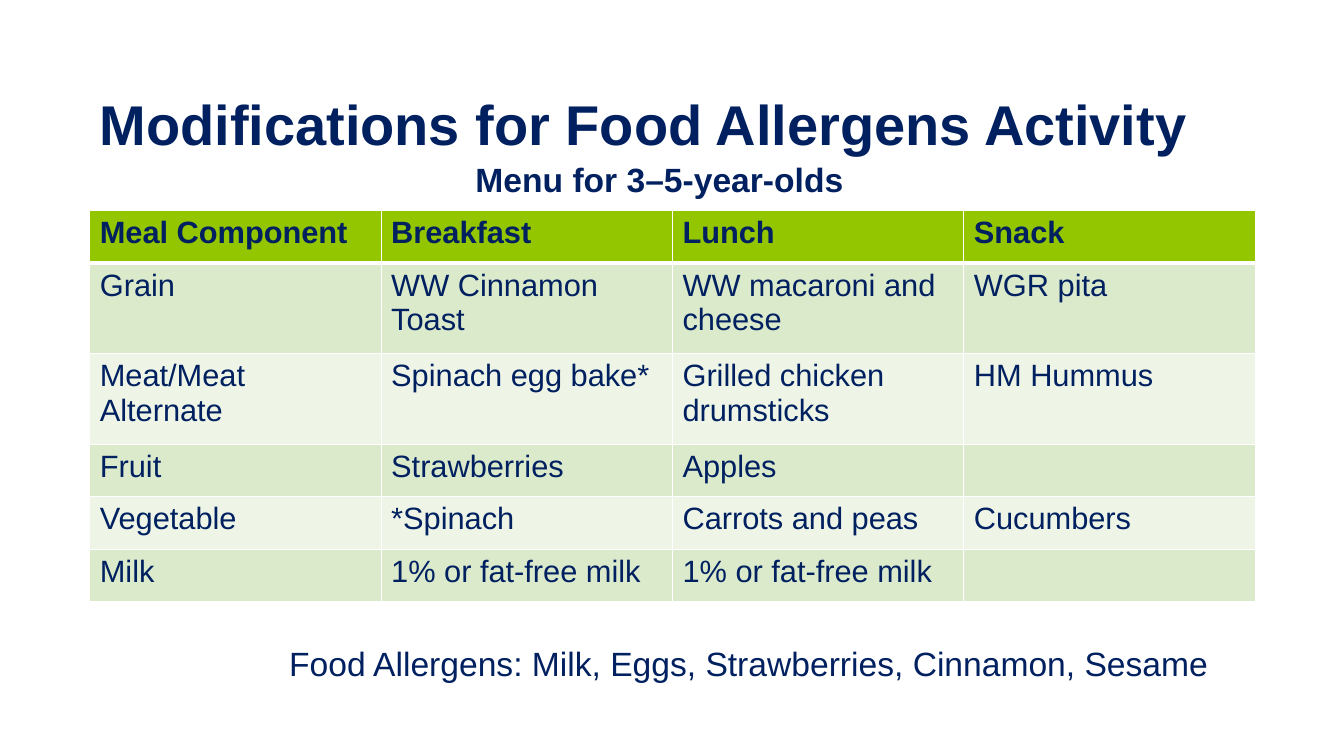
from lxml import etree
from pptx import Presentation
from pptx.dml.color import RGBColor
from pptx.enum.text import MSO_ANCHOR, PP_ALIGN
from pptx.oxml.ns import qn
from pptx.util import Inches, Pt

LEFT, CENTER = PP_ALIGN.LEFT, PP_ALIGN.CENTER
TOP, MIDDLE = MSO_ANCHOR.TOP, MSO_ANCHOR.MIDDLE

MENU = [
    ["Meal Component", "Breakfast", "Lunch", "Snack"],
    ["Grain", "WW Cinnamon Toast", "WW macaroni and cheese", "WGR pita"],
    ["Meat/Meat Alternate", "Spinach egg bake*", "Grilled chicken drumsticks", "HM Hummus"],
    ["Fruit", "Strawberries", "Apples", ""],
    ["Vegetable", "*Spinach", "Carrots and peas", "Cucumbers"],
    ["Milk", "1% or fat-free milk", "1% or fat-free milk", ""],
]
SHORT_ROW, TALL_ROW = 6.93, 12
ROW_HEIGHTS = [SHORT_ROW, TALL_ROW, TALL_ROW, SHORT_ROW, SHORT_ROW, SHORT_ROW]


def color(value):
    return RGBColor.from_string(value)


class MenuSlide:
    """Holds the style and the slide; lengths are percentages of the slide's size."""

    font_name = "Arial"
    ink, line = "002060", "FFFFFF"
    header_fill, band_fills = "94C600", ("DCEACC", "EEF5E7")

    def __init__(self, deck):
        self.deck = deck
        self.slide = deck.slides.add_slide(deck.slide_layouts[6])

    def across(self, share):
        return round(self.deck.slide_width * share / 100)

    def down(self, share):
        return round(self.deck.slide_height * share / 100)

    def area(self, left, top, width, height):
        return self.across(left), self.down(top), self.across(width), self.down(height)

    def set_text(self, para, text, size, bold):
        para.text = text
        para.font.name = self.font_name
        para.font.size = Pt(size)
        para.font.bold = bold
        para.font.color.rgb = color(self.ink)

    def text(self, text, place, size=24, bold=False, align=LEFT, anchor=TOP):
        box = self.slide.shapes.add_textbox(*self.area(*place))
        frame = box.text_frame
        frame.word_wrap = True
        frame.vertical_anchor = anchor
        para = frame.paragraphs[0]
        para.alignment = align
        self.set_text(para, text, size, bold)

    def border(self, cell, side, width):
        properties = cell._tc.get_or_add_tcPr()
        edge = etree.SubElement(properties, qn(f"a:ln{side}"), w=str(Pt(width)))
        fill = etree.SubElement(edge, qn("a:solidFill"))
        etree.SubElement(fill, qn("a:srgbClr"), val=self.line)

    def table(self, rows, left, top, width, heights, size=22):
        place = self.area(left, top, width, sum(heights))
        table = self.slide.shapes.add_table(len(rows), len(rows[0]), *place).table
        for column in table.columns:
            column.width = self.across(width / len(rows[0]))
        for index, (texts, height) in enumerate(zip(rows, heights)):
            table.rows[index].height = self.down(height)
            header = index == 0
            fill = self.header_fill if header else self.band_fills[(index - 1) % 2]
            # The rule between the header and the body is thicker
            widths = {"L": 1, "R": 1, "T": 3 if index == 1 else 1, "B": 3 if header else 1}
            for cell, text in zip(table.rows[index].cells, texts):
                for side, line_width in widths.items():
                    self.border(cell, side, line_width)
                cell.fill.solid()
                cell.fill.fore_color.rgb = color(fill)
                para = cell.text_frame.paragraphs[0]
                para.space_after = Pt(3)
                self.set_text(para, text, size, header)


def main():
    deck = Presentation()
    deck.slide_width, deck.slide_height = Inches(13.33), Inches(7.5)
    page = MenuSlide(deck)

    # Heading
    page.text("Modifications for Food Allergens Activity", (6.68, 8, 86.72, 16.67),
              size=40, bold=True, anchor=MIDDLE)

    # Menu table
    page.table(MENU, 6.68, 27.87, 86.72, ROW_HEIGHTS)

    # Allergen list and table caption
    page.text("Food Allergens: Milk, Eggs, Strawberries, Cinnamon, Sesame",
              (20.78, 84.4, 70.89, 6.67))
    page.text("Menu for 3–5-year-olds", (27.91, 20.4, 42.31, 6.67), bold=True, align=CENTER)

    deck.save("out.pptx")


if __name__ == "__main__":
    main()
